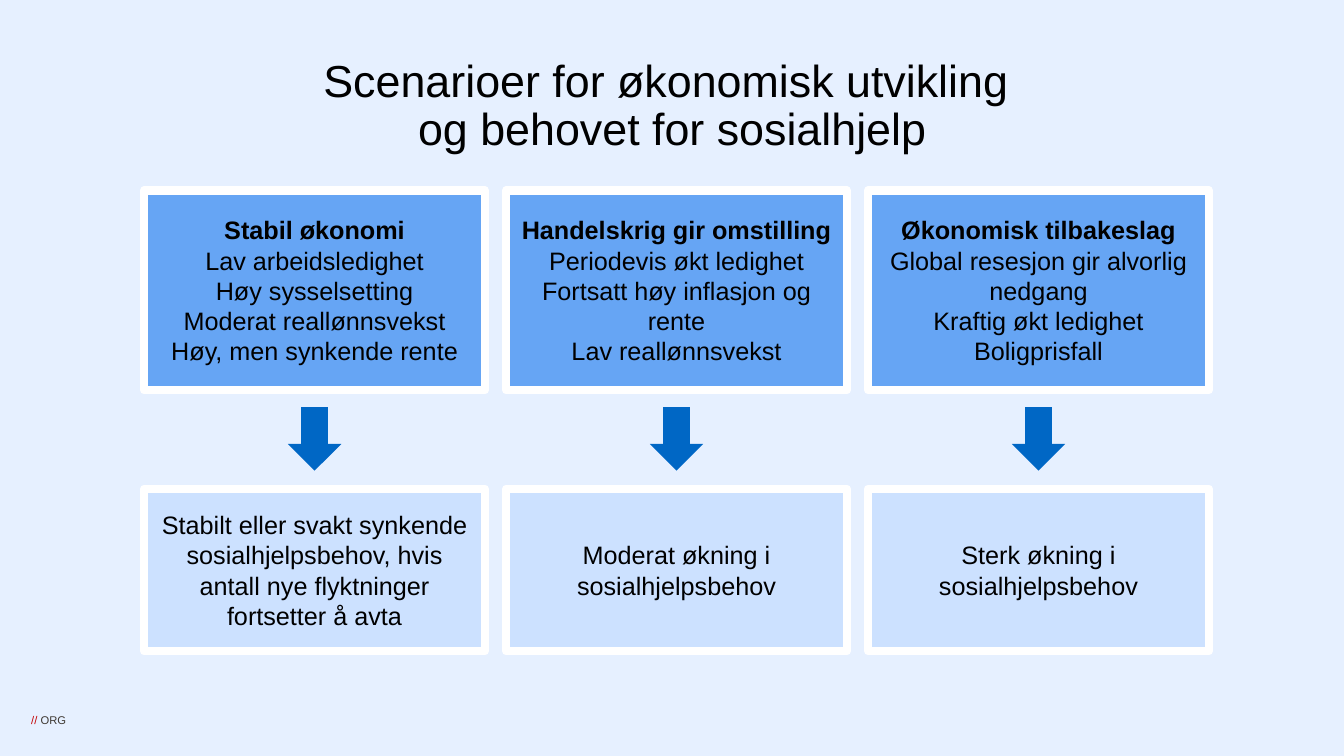
"""Build a slide of three economic scenarios and their effect on social assistance."""
from dataclasses import dataclass

from pptx import Presentation
from pptx.dml.color import RGBColor
from pptx.enum.shapes import MSO_SHAPE as SHAPE
from pptx.enum.text import MSO_ANCHOR as ANCHOR, MSO_AUTO_SIZE as AUTO_SIZE, PP_ALIGN as ALIGN
from pptx.shapes.autoshape import Shape
from pptx.slide import Slide
from pptx.util import Inches, Pt

PALE_BLUE = RGBColor(0xE6, 0xF0, 0xFF)
LIGHT_BLUE = RGBColor(0xCC, 0xE1, 0xFF)
MID_BLUE = RGBColor(0x66, 0xA5, 0xF4)
DEEP_BLUE = RGBColor(0x00, 0x67, 0xC5)
RED = RGBColor(0xC3, 0x00, 0x00)
GREY = RGBColor(0x3E, 0x38, 0x32)
BLACK = RGBColor(0x00, 0x00, 0x00)
WHITE = RGBColor(0xFF, 0xFF, 0xFF)

FONT = "Arial"
LEFT, PITCH, BOX_W = 1.43, 3.59, 3.38
SCENARIO_TOP, SCENARIO_H = 1.89, 1.98
ARROW_TOP, ARROW_W, ARROW_H = 4.04, 0.53, 0.63
NEED_TOP, NEED_H = 4.85, 1.61


@dataclass(frozen=True)
class Scenario:
    heading: str
    traits: tuple[str, ...]
    need: str


SCENARIOS = (
    Scenario(
        "Stabil økonomi",
        ("Lav arbeidsledighet", "Høy sysselsetting", "Moderat reallønnsvekst",
         "Høy, men synkende rente"),
        "Stabilt eller svakt synkende sosialhjelpsbehov, hvis antall nye flyktninger "
        "fortsetter å avta",
    ),
    Scenario(
        "Handelskrig gir omstilling",
        ("Periodevis økt ledighet", "Fortsatt høy inflasjon og rente", "Lav reallønnsvekst"),
        "Moderat økning i sosialhjelpsbehov",
    ),
    Scenario(
        "Økonomisk tilbakeslag",
        ("Global resesjon gir alvorlig nedgang", "Kraftig økt ledighet", "Boligprisfall"),
        "Sterk økning i sosialhjelpsbehov",
    ),
)


def add_filled(s: Slide, kind: SHAPE, x: float, y: float, w: float, h: float,
               fill: RGBColor) -> Shape:
    """Add a preset shape with a solid fill, no outline and no shadow."""
    sp = s.shapes.add_shape(kind, Inches(x), Inches(y), Inches(w), Inches(h))
    sp.shadow.inherit = False
    sp.fill.solid()
    sp.fill.fore_color.rgb = fill
    sp.line.fill.background()
    return sp


def add_box(s: Slide, x: float, y: float, h: float, fill: RGBColor,
            lines: tuple[str, ...]) -> Shape:
    """Add a white-framed box with centred lines of text."""
    sp = add_filled(s, SHAPE.RECTANGLE, x, y, BOX_W, h, fill)
    sp.line.color.rgb = WHITE
    sp.line.width = Pt(6)
    tf = sp.text_frame
    tf.word_wrap = True
    tf.vertical_anchor = ANCHOR.MIDDLE
    tf.text = "\n".join(lines)
    for p in tf.paragraphs:
        p.alignment = ALIGN.CENTER
        p.font.name, p.font.size = FONT, Pt(18)
        p.font.color.rgb = BLACK
    return sp


def add_scenario(s: Slide, x: float, scenario: Scenario) -> None:
    """Draw one column: scenario, arrow and resulting need."""
    sp = add_box(s, x, SCENARIO_TOP, SCENARIO_H, MID_BLUE,
                 (scenario.heading, *scenario.traits))
    sp.text_frame.paragraphs[0].font.bold = True
    add_filled(s, SHAPE.DOWN_ARROW, x + (BOX_W - ARROW_W) / 2, ARROW_TOP,
               ARROW_W, ARROW_H, DEEP_BLUE)
    add_box(s, x, NEED_TOP, NEED_H, LIGHT_BLUE, (scenario.need,))


def set_title(s: Slide) -> None:
    """Place and format the title placeholder."""
    sp = s.shapes.title
    sp.left, sp.top, sp.width, sp.height = Inches(0.92), Inches(0.53), Inches(11.5), Inches(0.57)
    tf = sp.text_frame
    tf.word_wrap = True
    tf.auto_size = AUTO_SIZE.NONE
    tf.vertical_anchor = ANCHOR.TOP
    p = tf.paragraphs[0]
    p.text = "Scenarioer for økonomisk utvikling \vog behovet for sosialhjelp"
    p.alignment = ALIGN.CENTER
    p.line_spacing = 0.9
    p.font.name, p.font.size = FONT, Pt(32)
    p.font.color.rgb = BLACK


def add_footer(s: Slide) -> None:
    """Add the small two-coloured sender mark."""
    sp = s.shapes.add_textbox(Inches(0.31), Inches(7.08), Inches(0.39), Inches(0.13))
    tf = sp.text_frame
    tf.margin_left = tf.margin_right = tf.margin_top = tf.margin_bottom = 0
    tf.word_wrap = False
    p = tf.paragraphs[0]
    for text, color in (("// ", RED), ("ORG", GREY)):
        r = p.add_run()
        r.text = text
        r.font.color.rgb = color
    p.font.name, p.font.size = FONT, Pt(8)


def main() -> None:
    """Build and save the slide."""
    prs = Presentation()
    prs.slide_width, prs.slide_height = Inches(13.33), Inches(7.5)
    s = prs.slides.add_slide(prs.slide_layouts[5])
    s.background.fill.solid()
    s.background.fill.fore_color.rgb = PALE_BLUE
    set_title(s)
    for i, scenario in enumerate(SCENARIOS):
        add_scenario(s, LEFT + i * PITCH, scenario)
    add_footer(s)
    prs.save("out.pptx")


if __name__ == "__main__":
    main()
